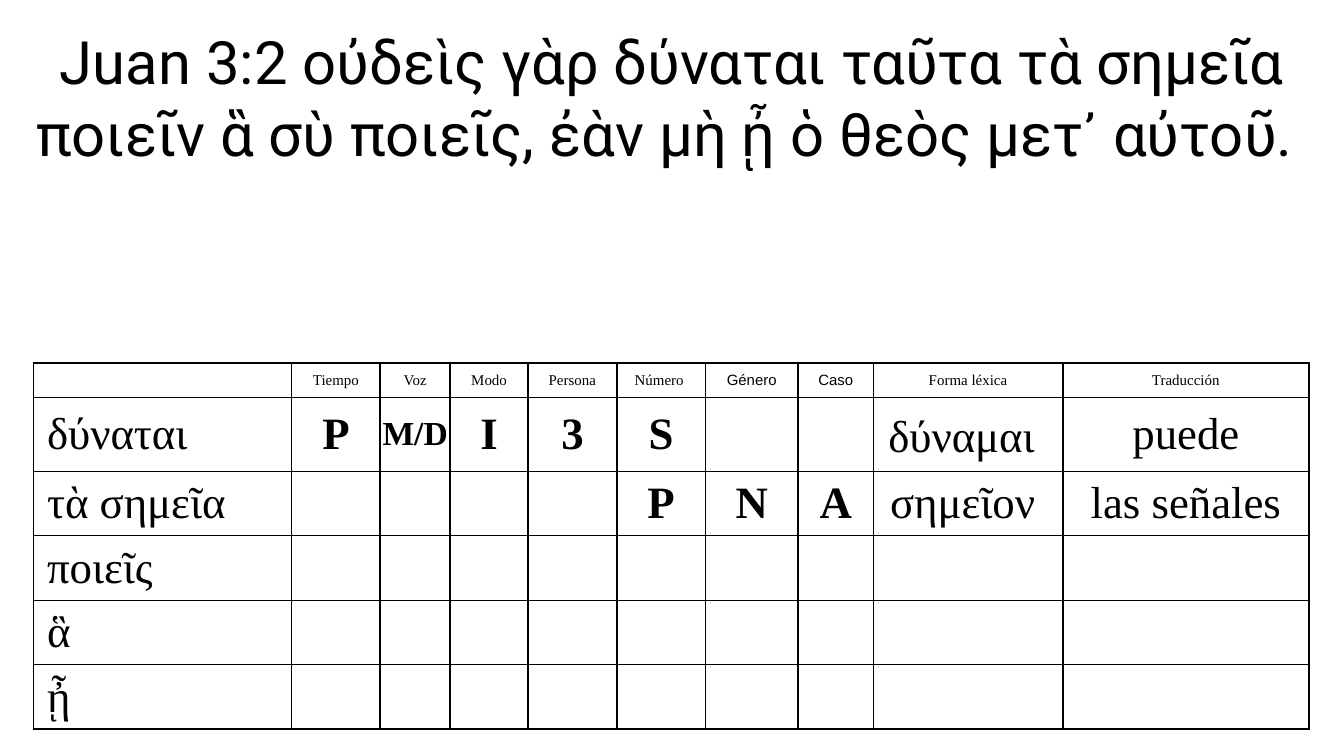
from dataclasses import dataclass

from lxml import etree
from pptx import Presentation, util as u
from pptx.dml.color import RGBColor
from pptx.enum import text
from pptx.oxml import ns


@dataclass(frozen=True)
class Theme:
    ink: RGBColor = RGBColor(0, 0, 0)
    title_font: str = "Roboto"
    serif: str = "Times New Roman"
    sans: str = "Arial"
    title: int = 32
    label: int = 8
    small: int = 18
    body: int = 24
    large: int = 28
    outer_line: float = 1
    inner_line: float = 0.75


@dataclass(frozen=True)
class Run:
    words: str
    size: int
    font: str
    bold: bool = False


@dataclass(frozen=True)
class Entry:
    """Runs placed in one grid position."""
    row: int
    column: int
    runs: tuple[Run, ...]
    centred: bool = True
    side_margin: float = 0.1


THEME = Theme()
WIDTH = 10
HEIGHT = WIDTH * 9 / 16
COLUMNS = (1.92, 0.66, 0.52, 0.58, 0.66, 0.66, 0.69, 0.56, 1.41, 1.83)
ROWS = (0.26, 0.54) + (0.48,) * 4
VERSE = ("Juan 3:2 οὐδεὶς γὰρ δύναται ταῦτα τὰ σημεῖα ποιεῖν ἃ σὺ ποιεῖς, "
         "ἐὰν μὴ ᾖ ὁ θεὸς μετ᾽ αὐτοῦ. ")
LABELS = ("Tiempo", "Voz", "Modo", "Persona", "Número ", "Género", "Caso",
          "Forma léxica", "Traducción")
SANS_LABELS = ("Género", "Caso")
WORDS = ("δύναται", "τὰ σημεῖα", "ποιεῖς", "ἃ", "ᾖ")
# Parsing codes by (row, column)
CODES = {(1, 1): "P", (1, 2): "M/D", (1, 3): "I", (1, 4): "3", (1, 5): "S",
         (2, 5): "P", (2, 6): "N", (2, 7): "A"}
MEANINGS = {(1, 9): "puede", (2, 8): "σημεῖον ", (2, 9): "las señales"}


def body_run(words: str, bold: bool = False) -> Run:
    return Run(words, THEME.body, THEME.serif, bold)


def table_entries() -> list[Entry]:
    entries = [
        Entry(0, column, (Run(label, THEME.label,
                              THEME.sans if label in SANS_LABELS else THEME.serif),))
        for column, label in enumerate(LABELS, 1)]
    entries += [Entry(row, 0, (body_run(word),), centred=False)
                for row, word in enumerate(WORDS, 1)]
    for (row, column), code in CODES.items():
        # The longest code gets a smaller size and the full column width
        if len(code) > 1:
            run = Run(code, THEME.small, THEME.serif, True)
            entries.append(Entry(row, column, (run,), side_margin=0))
        else:
            entries.append(Entry(row, column, (body_run(code, True),)))
    entries += [Entry(row, column, (body_run(words),))
                for (row, column), words in MEANINGS.items()]
    entries.append(Entry(1, 8, (body_run("δύναμαι"), Run(" ", THEME.large, THEME.serif))))
    return entries


def add_runs(paragraph, runs: tuple[Run, ...]) -> None:
    for item in runs:
        run = paragraph.add_run()
        run.text = item.words
        run.font.size = u.Pt(item.size)
        run.font.name = item.font
        run.font.bold = item.bold
        run.font.color.rgb = THEME.ink


def add_verse(slide) -> None:
    shape = slide.shapes.add_textbox(
        u.Inches(WIDTH * 0.017), u.Inches(0.13), u.Inches(WIDTH * 0.967), u.Inches(1.18))
    frame = shape.text_frame
    frame.word_wrap = True
    frame.auto_size = text.MSO_AUTO_SIZE.SHAPE_TO_FIT_TEXT
    frame.vertical_anchor = text.MSO_ANCHOR.MIDDLE
    paragraph = frame.paragraphs[0]
    paragraph.alignment = text.PP_ALIGN.CENTER
    add_runs(paragraph, (Run(VERSE, THEME.title, THEME.title_font),))


def set_borders(cell, widths: dict[str, float]) -> None:
    properties = cell._tc.get_or_add_tcPr()
    for index, (side, width) in enumerate(widths.items()):
        line = etree.Element(ns.qn(f"a:ln{side}"), w=str(u.Pt(width)))
        fill = etree.SubElement(line, ns.qn("a:solidFill"))
        etree.SubElement(fill, ns.qn("a:srgbClr"), val=str(THEME.ink))
        properties.insert(index, line)


def add_parsing_table(slide) -> None:
    frame = slide.shapes.add_table(
        len(ROWS), len(COLUMNS), u.Inches(WIDTH * 0.025), u.Inches(2.7),
        u.Inches(sum(COLUMNS)), u.Inches(sum(ROWS)))
    table = frame.table
    table.first_row = table.horz_banding = False
    for column, width in zip(table.columns, COLUMNS):
        column.width = u.Inches(width)
    for row, height in zip(table.rows, ROWS):
        row.height = u.Inches(height)

    # Plain cells: heavier outer and vertical rules, lighter row rules
    last = len(ROWS) - 1
    for index, row in enumerate(table.rows):
        for cell in row.cells:
            cell.fill.background()
            cell.vertical_anchor = text.MSO_ANCHOR.MIDDLE
            cell.margin_top = cell.margin_bottom = u.Inches(0.04)
            set_borders(cell, {
                "L": THEME.outer_line, "R": THEME.outer_line,
                "T": THEME.outer_line if index == 0 else THEME.inner_line,
                "B": THEME.outer_line if index == last else THEME.inner_line})

    # A small empty line keeps the header row low
    corner = table.cell(0, 0).text_frame.paragraphs[0]
    etree.SubElement(corner._p, ns.qn("a:endParaRPr"), sz=str(THEME.label * 100))

    for entry in table_entries():
        cell = table.cell(entry.row, entry.column)
        cell.margin_left = cell.margin_right = u.Inches(entry.side_margin)
        paragraph = cell.text_frame.paragraphs[0]
        paragraph.alignment = (text.PP_ALIGN.CENTER if entry.centred
                               else text.PP_ALIGN.LEFT)
        add_runs(paragraph, entry.runs)


def main() -> None:
    presentation = Presentation()
    presentation.slide_width = u.Inches(WIDTH)
    presentation.slide_height = u.Inches(HEIGHT)
    slide = presentation.slides.add_slide(presentation.slide_layouts[6])
    add_verse(slide)
    add_parsing_table(slide)
    presentation.save("out.pptx")


if __name__ == "__main__":
    main()
